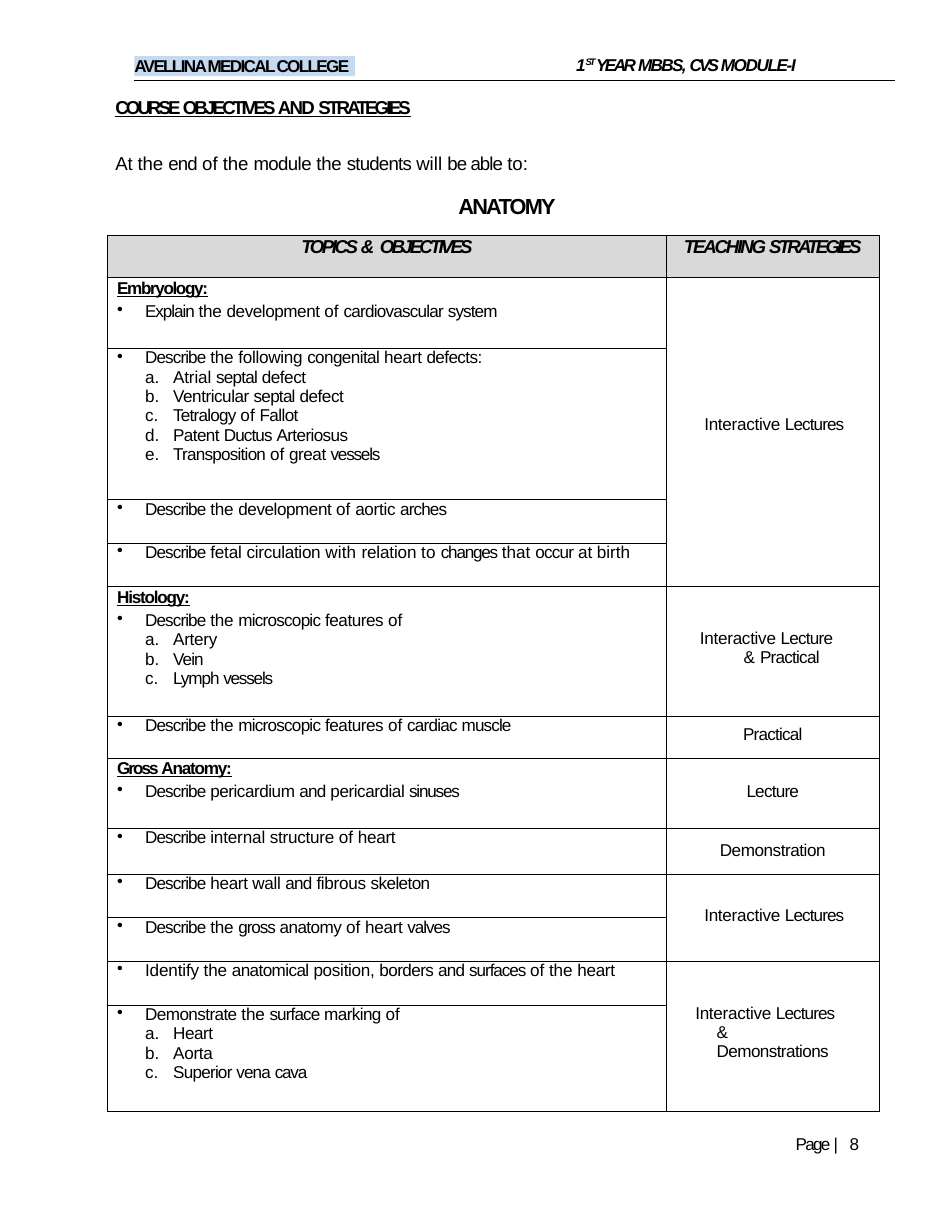
from lxml import etree
from pptx import Presentation
from pptx import util as u
from pptx.dml.color import RGBColor
from pptx.enum import shapes, text
from pptx.oxml.ns import qn

Pt = u.Pt
LEFT, MID, RIGHT = text.PP_ALIGN.LEFT, text.PP_ALIGN.CENTER, text.PP_ALIGN.RIGHT

THEME = {
    "font": "Arial", "ink": "000000", "mark": "C5D9EF", "head": "D9D9D9",
    "rule": 0.75, "grid": 0.5,
    "body": {"size": 11},
    "bold": {"size": 11, "bold": True},
    "topic": {"size": 11, "bold": True, "line": True},
    "module": {"size": 11, "bold": True, "ital": True},
    "raised": {"size": 10.5, "bold": True, "ital": True, "base": 32},
    "column": {"size": 12, "bold": True, "ital": True},
    "title": {"size": 12, "bold": True, "line": True},
    "intro": {"size": 12},
    "subject": {"size": 14, "bold": True},
}

COLLEGE = "AVELLINA MEDICAL COLLEGE"
MODULE = [("1", "module"), ("ST ", "raised"), ("YEAR MBBS, CVS MODULE-I", "module")]
PAGE = "Page | 8"
TITLE = [
    ("COURSE OBJECTIVES AND STRATEGIES", "title", 1, LEFT),
    ("At the end of the module the students will be able to:", "intro", 21.9, LEFT),
    ("ANATOMY", "subject", 11.4, RIGHT),
]
HEADS = ["TOPICS & OBJECTIVES", "TEACHING STRATEGIES"]
HEAD_H = 27.4
COLS = [359, 137]

ROWS = [
    (45.4, "Embryology:", "Explain the development of cardiovascular system", [],
     ("Interactive Lectures", 88.5, 24.5, 0)),
    (97.2, "", "Describe the following congenital heart defects:",
     ["Atrial septal defect", "Ventricular septal defect", "Tetralogy of Fallot",
      "Patent Ductus Arteriosus", "Transposition of great vessels"], None),
    (28, "", "Describe the development of aortic arches", [], None),
    (28, "", "Describe fetal circulation with relation to changes that occur at birth", [], None),
    (83.5, "Histology:", "Describe the microscopic features of",
     ["Artery", "Vein", "Lymph vessels"],
     ("Interactive Lecture & Practical", 27, 49.7, -28)),
    (26.6, "", "Describe the microscopic features of cardiac muscle", [],
     ("Practical", 5.8, None, 0)),
    (45.4, "Gross Anatomy:", "Describe pericardium and pericardial sinuses", [],
     ("Lecture", 15.5, None, 0)),
    (29.5, "", "Describe internal structure of heart", [],
     ("Demonstration", 7.9, None, 0)),
    (28, "", "Describe heart wall and fibrous skeleton", [],
     ("Interactive Lectures", 20.5, 24.5, 0)),
    (28, "", "Describe the gross anatomy of heart valves", [], None),
    (28, "", "Identify the anatomical position, borders and surfaces of the heart", [],
     ("Interactive Lectures & Demonstrations", 27, 32.4, -13.7)),
    (68.4, "", "Demonstrate the surface marking of",
     ["Heart", "Aorta", "Superior vena cava"], None),
]

TRACK = {
    2.2: "|",
    0.1: "& with to",
    0: "of will to: that birth",
    -0.1: "the Atrial fetal relation at internal Identify",
    -0.2: "At Interactive following heart aortic circulation Artery structure wall "
          "fibrous position, Aorta",
    -0.3: "development defect Ventricular great features pericardium pericardial "
          "Demonstration Heart",
    -0.5: "end students and cardiovascular septal Tetralogy Transposition occur "
          "microscopic Practical Lecture cardiac Superior",
    -0.6: "be able system Describe Ductus arches Vein muscle Lectures surface vena 8",
    -0.7: "Explain Lymph gross valves surfaces",
    -0.8: "vessels changes Histology: Anatomy: sinuses cava",
    -0.9: "Embryology: 1 MODULE-I",
    -1.1: "AND Page AVELLINA MEDICAL COLLEGE MBBS,",
    -1.2: "ANATOMY",
    -1.3: "Gross",
    -1.4: "TEACHING ST",
    -1.7: "YEAR",
    -1.6: "TOPICS",
    -1.8: "OBJECTIVES STRATEGIES",
    -1.9: "COURSE CVS",
}
SPACE = {word: gap for gap, words in TRACK.items() for word in words.split()}


def ink(code):
    return RGBColor.from_string(code)


def write(par, words, style):
    look = THEME[style]
    for word in words.replace(" ", " \n").split("\n"):
        if not word:
            continue
        run = par.add_run()
        run.text = word
        font = run.font
        font.name, font.size = THEME["font"], Pt(look["size"])
        font.bold, font.italic = look.get("bold", False), look.get("ital", False)
        font.underline = look.get("line", False)
        font.color.rgb = ink(THEME["ink"])
        props = font._element
        props.set("spc", str(round(SPACE.get(word.strip(), -0.4) * 100)))
        if "base" in look:
            props.set("baseline", str(look["base"] * 1000))


def indent(par, left, first=0, mark=None):
    props = par._p.get_or_add_pPr()
    props.set("marL", str(Pt(left)))
    props.set("indent", str(Pt(first)))
    if mark == "dot":
        etree.SubElement(props, qn("a:buChar")).set("char", "•")
    elif mark:
        etree.SubElement(props, qn("a:buAutoNum")).set("type", mark)


def frame(shape, top=0):
    body = shape.text_frame
    body.word_wrap = True
    body.auto_size = text.MSO_AUTO_SIZE.NONE
    body.vertical_anchor = text.MSO_ANCHOR.TOP
    body.margin_left = body.margin_right = body.margin_bottom = 0
    body.margin_top = Pt(top)
    return body


def place(shape, *box):
    shape.left, shape.top, shape.width, shape.height = map(Pt, box)


def border(cell):
    props = cell._tc.get_or_add_tcPr()
    for spot, side in enumerate(("lnL", "lnR", "lnT", "lnB")):
        line = etree.Element(qn("a:" + side), w=str(Pt(THEME["grid"])))
        fill = etree.SubElement(line, qn("a:solidFill"))
        etree.SubElement(fill, qn("a:srgbClr")).set("val", THEME["ink"])
        props.insert(spot, line)


def topics(cell, head, point, subs):
    items = [(head, "topic", 6, 0, None, 0)] if head else []
    items.append((point, "body", 24, -18, "dot", 2.8 if head else 0.2))
    items += [(sub, "body", 42, -18, "alphaLcPeriod", 0.2) for sub in subs]
    body = cell.text_frame
    for i, (words, style, left, first, mark, gap) in enumerate(items):
        par = body.add_paragraph() if i else body.paragraphs[0]
        par.space_before = Pt(gap)
        if style == "topic":
            par.line_spacing = Pt(12.9)
        if mark == "alphaLcPeriod":
            par.level = 1
        indent(par, left, first, mark)
        write(par, words, style)


def method(cell, words, top, left, first):
    cell.margin_top = Pt(top)
    par = cell.text_frame.paragraphs[0]
    if left is None:
        par.alignment = MID
    else:
        indent(par, left, first)
    if first:
        cell.margin_right = Pt(25)
        par.line_spacing = 1.02
    write(par, words, "body")


def grid(slide):
    high = HEAD_H + sum(row[0] for row in ROWS)
    table = slide.shapes.add_table(len(ROWS) + 1, 2, Pt(69.3), Pt(151.2),
                                   Pt(sum(COLS)), Pt(high)).table
    table.first_row = table.horz_banding = False
    for col, wide in zip(table.columns, COLS):
        col.width = Pt(wide)
    for row, tall in zip(table.rows, [HEAD_H] + [row[0] for row in ROWS]):
        row.height = Pt(tall)
    for cell in table.iter_cells():
        cell.margin_left = cell.margin_right = cell.margin_top = cell.margin_bottom = 0
        cell.fill.background()
        border(cell)
    for col, words in enumerate(HEADS):
        cell = table.cell(0, col)
        cell.fill.solid()
        cell.fill.fore_color.rgb = ink(THEME["head"])
        par = cell.text_frame.paragraphs[0]
        par.alignment, par.line_spacing = MID, Pt(14.1)
        write(par, words, "column")
    starts = [i for i, row in enumerate(ROWS, 1) if row[4]] + [len(ROWS) + 1]
    for start, end in zip(starts, starts[1:]):
        if end - start > 1:
            table.cell(start, 1).merge(table.cell(end - 1, 1))
        method(table.cell(start, 1), *ROWS[start - 1][4])
    for i, (_, head, point, subs, _) in enumerate(ROWS, 1):
        topics(table.cell(i, 0), head, point, subs)


def main():
    deck = Presentation()
    deck.slide_width, deck.slide_height = Pt(612), Pt(792)
    slide = deck.slides.add_slide(deck.slide_layouts[5])

    title = slide.shapes.title
    place(title, 74.2, 60.5, 283, 80.6)
    body = frame(title, 1)
    for i, (words, style, gap, side) in enumerate(TITLE):
        par = body.add_paragraph() if i else body.paragraphs[0]
        par.alignment, par.space_before = side, Pt(gap)
        write(par, words, style)

    rule = slide.shapes.add_connector(shapes.MSO_CONNECTOR.STRAIGHT,
                                      Pt(86.4), Pt(51.8), Pt(575.3), Pt(51.8))
    rule.line.color.rgb, rule.line.width = ink(THEME["ink"]), Pt(THEME["rule"])
    etree.SubElement(rule._element.spPr, qn("a:effectLst"))

    page = slide.shapes.add_textbox(Pt(510.5), Pt(730), Pt(46), Pt(13))
    par = frame(page).paragraphs[0]
    par.line_spacing = Pt(11.5)
    indent(par, 1)
    write(par, PAGE, "body")

    band = slide.shapes.add_shape(shapes.MSO_SHAPE.RECTANGLE,
                                  Pt(86.4), Pt(36), Pt(141.8), Pt(13))
    band.shadow.inherit = False
    band.fill.solid()
    band.fill.fore_color.rgb = ink(THEME["mark"])
    band.line.fill.background()
    par = frame(band).paragraphs[0]
    par.alignment, par.line_spacing = LEFT, Pt(12.9)
    write(par, COLLEGE, "bold")

    grid(slide)

    name = slide.shapes.add_textbox(Pt(369.4), Pt(33.8), Pt(199.4), Pt(14.4))
    par = frame(name, 1).paragraphs[0]
    par.space_before = Pt(1)
    indent(par, 1)
    for words, style in MODULE:
        write(par, words, style)

    deck.save("out.pptx")


if __name__ == "__main__":
    main()
